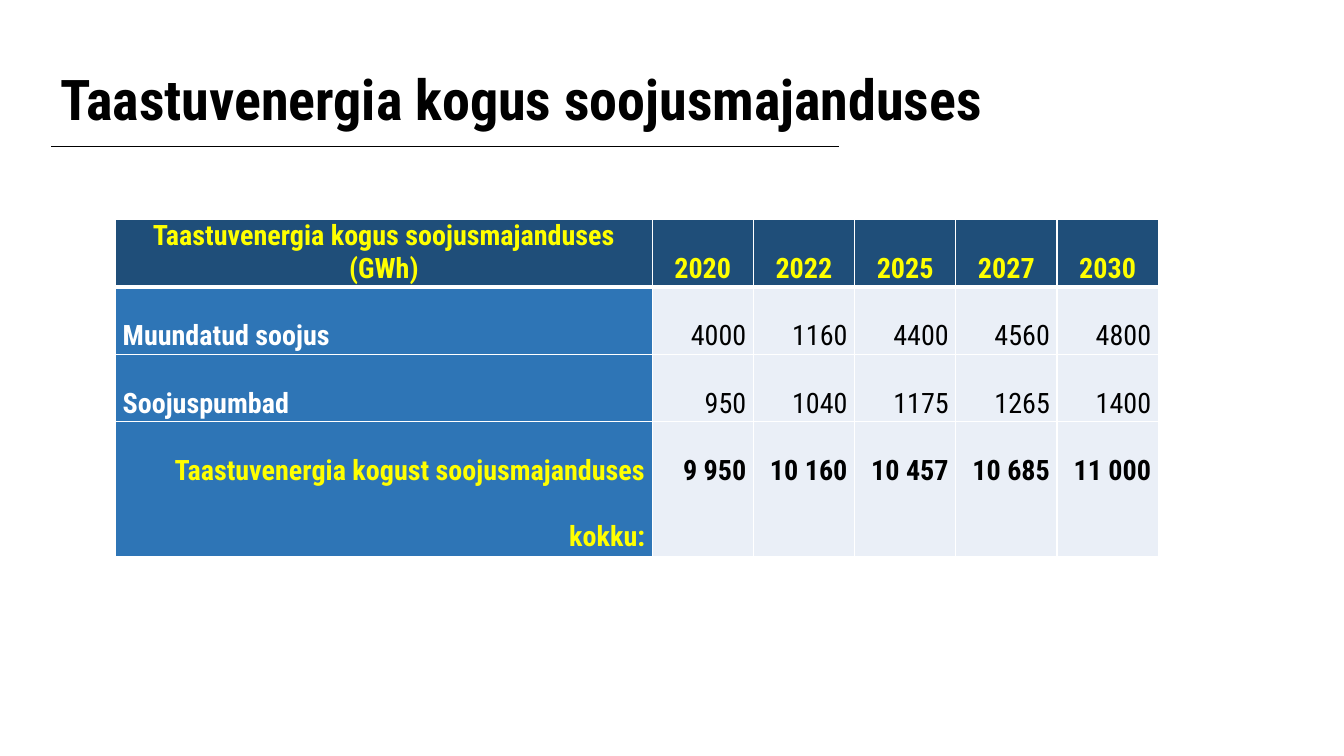
from lxml import etree
from pptx import Presentation
from pptx import util as u
from pptx.dml.color import RGBColor
from pptx.enum import shapes, text
from pptx.oxml import ns

ALIGN = text.PP_ALIGN


def color(value):
    return RGBColor.from_string(value)


def write(frame, words, size=20, bold=True, ink="000000", align=ALIGN.LEFT, spacing=2.0):
    para = frame.paragraphs[0]
    para.alignment = align
    para.line_spacing = spacing
    span = para.add_run()
    span.text = words
    span.font.name = "Roboto Condensed"
    span.font.size = u.Pt(size)
    span.font.bold = bold
    span.font.color.rgb = color(ink)


deck = Presentation()
deck.slide_width, deck.slide_height = u.Pt(957.6), u.Pt(538.56)
page = deck.slides.add_slide(deck.slide_layouts[6])

title = page.shapes.add_textbox(u.Pt(36), u.Pt(49), u.Pt(692), u.Pt(48.2))
title.text_frame.word_wrap = True
title.text_frame.vertical_anchor = text.MSO_ANCHOR.MIDDLE
write(title.text_frame, "Taastuvenergia kogus soojusmajanduses", size=40, spacing=0.9)

rule = page.shapes.add_connector(
    shapes.MSO_CONNECTOR.STRAIGHT, u.Pt(36.7), u.Pt(104.4), u.Pt(597.6), u.Pt(104.4))
rule.line.color.rgb = color("000000")
rule.line.width = u.Pt(0.75)
etree.SubElement(rule._element.spPr, ns.qn("a:effectLst"))

rows = [
    ["Taastuvenergia kogus soojusmajanduses (GWh)", "2020", "2022", "2025", "2027", "2030"],
    ["Muundatud soojus", "4000", "1160", "4400", "4560", "4800"],
    ["Soojuspumbad", "950", "1040", "1175", "1265", "1400"],
    ["Taastuvenergia kogust soojusmajanduses kokku:",
     "9 950", "10 160", "10 457", "10 685", "11 000"],
]
widths = [382.3] + [72.14] * 5
heights = [47, 47, 47, 94]
header, total = 0, len(rows) - 1

table = page.shapes.add_table(
    len(rows), len(widths), u.Pt(82.4), u.Pt(156.2), u.Pt(sum(widths)), u.Pt(sum(heights))).table
for column, width in zip(table.columns, widths):
    column.width = u.Pt(width)

for r, values in enumerate(rows):
    table.rows[r].height = u.Pt(heights[r])
    for c, value in enumerate(values):
        cell = table.cell(r, c)
        cell.margin_left = cell.margin_right = u.Pt(5.04)
        cell.margin_top = cell.margin_bottom = 0
        if r == header:
            fill, ink, align = "1F4E79", "FFFF00", ALIGN.CENTER
        elif c > 0:
            fill, ink, align = "EAEFF7", "000000", ALIGN.RIGHT
        elif r == total:
            fill, ink, align = "2E75B6", "FFFF00", ALIGN.RIGHT
        else:
            fill, ink, align = "2E75B6", "FFFFFF", ALIGN.JUSTIFY
        write(cell.text_frame, value, ink=ink, align=align,
              bold=c == 0 or r in (header, total),
              spacing=1.0 if r == header and c == 0 else 2.0)

        thick = {(0, "lnB"), (1, "lnT")}
        for side in ("lnL", "lnR", "lnT", "lnB"):
            border = etree.SubElement(cell._tc.get_or_add_tcPr(), ns.qn(f"a:{side}"))
            border.set("w", str(u.Pt(3 if (r, side) in thick else 1)))
            paint = etree.SubElement(border, ns.qn("a:solidFill"))
            etree.SubElement(paint, ns.qn("a:srgbClr")).set("val", "FFFFFF")
        cell.fill.solid()
        cell.fill.fore_color.rgb = color(fill)

deck.save("out.pptx")
